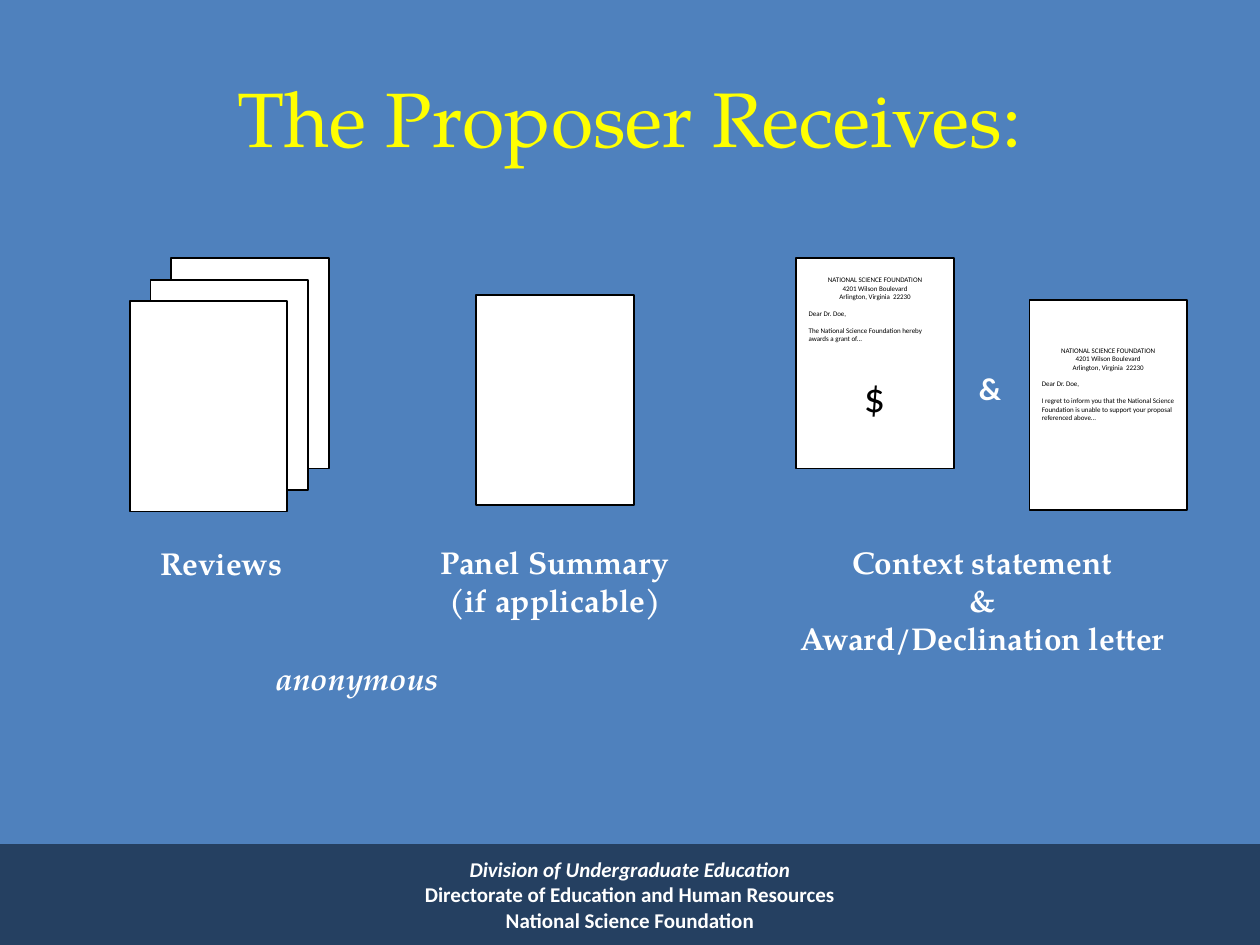
from dataclasses import dataclass
from pptx import Presentation
from pptx import util as u
from pptx.dml import color
from pptx.enum import shapes, text


@dataclass
class Theme:
    blue: str = "4F81BD"
    navy: str = "254061"
    gold: str = "FFFF00"
    white: str = "FFFFFF"
    black: str = "000000"
    serif: str = "TeX Gyre Pagella"
    sans: str = "Calibri"
    title: int = 44
    cash: int = 24
    label: int = 18
    foot: int = 12
    tiny: int = 4


theme = Theme()
rgb = color.RGBColor.from_string
mid = text.PP_ALIGN.CENTER
left = text.PP_ALIGN.LEFT

deck = Presentation()
deck.slide_width, deck.slide_height = u.Inches(10), u.Inches(7.5)
slide = deck.slides.add_slide(deck.slide_layouts[5])
slide.background.fill.solid()
slide.background.fill.fore_color.rgb = rgb(theme.blue)


def add_rect(x, y, w, h, fill):
    rect = slide.shapes.add_shape(
        shapes.MSO_SHAPE.RECTANGLE, u.Inches(x), u.Inches(y), u.Inches(w), u.Inches(h)
    )
    rect.shadow.inherit = False
    rect.fill.solid()
    rect.fill.fore_color.rgb = rgb(fill)
    rect.line.color.rgb = rgb(theme.black)
    rect.line.width = u.Pt(1)
    return rect


def write(box, lines, size, tint, face, bold=False, align=mid):
    frame = box.text_frame
    frame.word_wrap = True
    frame.text = "\n".join(lines)
    for para in frame.paragraphs:
        para.alignment = align
        para.font.size = u.Pt(size)
        para.font.name = face
        para.font.bold = bold
        para.font.color.rgb = rgb(tint)
    return frame.paragraphs


bar = add_rect(0, 6.7, 10, 0.8, theme.navy)
bar.line.fill.background()
bar.text_frame.vertical_anchor = text.MSO_ANCHOR.MIDDLE
foot = write(
    bar,
    [
        "Division of Undergraduate Education",
        "Directorate of Education and Human Resources",
        "National Science Foundation",
    ],
    theme.foot, theme.white, theme.sans, True,
)
foot[0].font.italic = True

title = slide.shapes.title
title.left, title.top = u.Inches(0.5), u.Inches(0.3)
title.width, title.height = u.Inches(9), u.Inches(1.25)
title.text_frame.vertical_anchor = text.MSO_ANCHOR.MIDDLE
write(title, ["The Proposer Receives:"], theme.title, theme.gold, theme.serif)

stack = [(1.36 - 0.165 * i, 2.05 + 0.17 * i) for i in range(3)]
for x, y in stack + [(3.78, 2.34), (6.32, 2.05), (8.17, 2.38)]:
    add_rect(x, y, 1.25, 1.67, theme.white)

labels = [
    (0.42, 4.27, 2.67, 0.71, ["Reviews"], theme.serif, mid),
    (3.03, 4.26, 2.75, 0.71, ["Panel Summary", "(if applicable)"], theme.serif, mid),
    (6.17, 4.26, 3.25, 1.01,
     ["Context statement", "&", "Award/Declination letter"], theme.serif, mid),
    (7.67, 2.88, 0.42, 0.4, ["&"], theme.sans, left),
    (2.09, 5.18, 2.24, 0.4, ["anonymous"], theme.serif, left),
]
for x, y, w, h, lines, face, align in labels:
    box = slide.shapes.add_textbox(u.Inches(x), u.Inches(y), u.Inches(w), u.Inches(h))
    paras = write(box, lines, theme.label, theme.white, face, True, align)
    paras[0].font.italic = lines == ["anonymous"]

cash = slide.shapes.add_textbox(u.Inches(6.69), u.Inches(2.89), u.Inches(0.5), u.Inches(0.5))
write(cash, ["$"], theme.cash, theme.black, theme.sans)

head = ["NATIONAL SCIENCE FOUNDATION", "4201 Wilson Boulevard", "Arlington, Virginia  22230"]
letters = [
    (6.32, 2.14, 0.69, "The National Science Foundation hereby awards a grant of..."),
    (8.17, 2.7, 0.83,
     "I regret to inform you that the National Science Foundation "
     "is unable to support your proposal referenced above..."),
]
for x, y, h, body in letters:
    box = slide.shapes.add_textbox(u.Inches(x), u.Inches(y), u.Inches(1.25), u.Inches(h))
    paras = write(box, head + ["Dear Dr. Doe,", body], theme.tiny, theme.black, theme.sans)
    for para in paras[len(head):]:
        para.alignment = left
        para.space_before = u.Pt(4.8)

deck.save("out.pptx")
